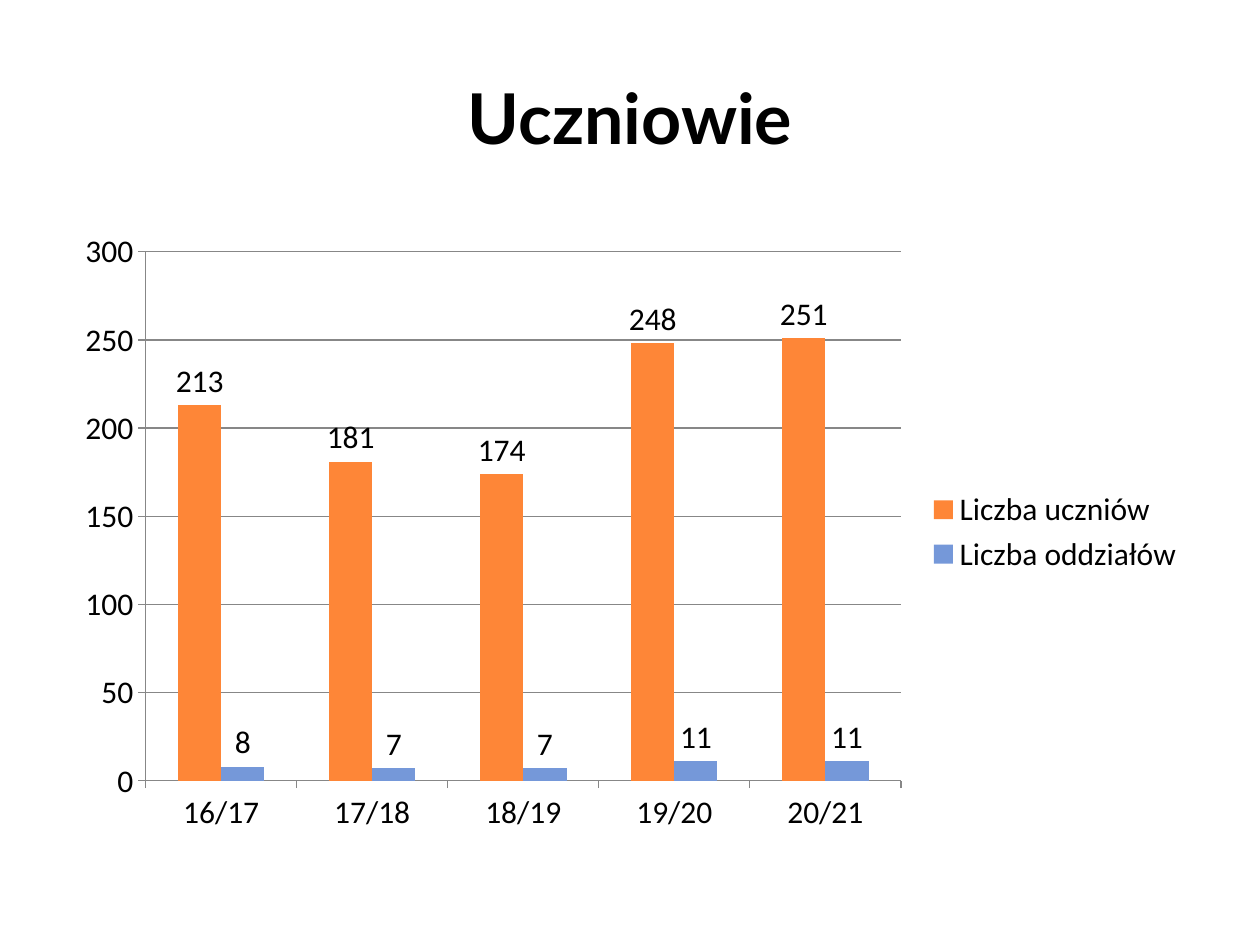
from lxml import etree
from pptx import Presentation
from pptx.chart.data import CategoryChartData
from pptx.dml.color import RGBColor
from pptx.enum.chart import XL_CHART_TYPE, XL_LABEL_POSITION, XL_LEGEND_POSITION, XL_TICK_MARK
from pptx.enum.text import MSO_ANCHOR, PP_ALIGN
from pptx.oxml.ns import qn
from pptx.util import Pt

COLUMNS = XL_CHART_TYPE.COLUMN_CLUSTERED
ABOVE = XL_LABEL_POSITION.OUTSIDE_END
RIGHT = XL_LEGEND_POSITION.RIGHT
OUTER = XL_TICK_MARK.OUTSIDE
NONE = XL_TICK_MARK.NONE
MIDDLE = MSO_ANCHOR.MIDDLE
CENTER = PP_ALIGN.CENTER

TITLE = "Uczniowie"
YEARS = ["16/17", "17/18", "18/19", "19/20", "20/21"]
SERIES = [
    ("Liczba uczniów", [213, 181, 174, 248, 251], "pupils"),
    ("Liczba oddziałów", [8, 7, 7, 11, 11], "classes"),
]
THEME = {
    "ink": RGBColor.from_string("000000"),
    "line": RGBColor.from_string("878787"),
    "pupils": RGBColor.from_string("FE8637"),
    "classes": RGBColor.from_string("7598D9"),
    "head": ("Lato", 40),
    "body": ("Calibri", 18),
}
PAGE = (1260, 945)
TITLE_BOX = (63, 38, 1134, 158)
CHART_BOX = (63, 220, 1134, 624)
PLOT_BOX = (146, 252, 755, 529)


def px(n):
    return round(n * 914400 / 126)


def style(font, kind, bold=False):
    font.name, size = THEME[kind]
    font.size = Pt(size)
    font.bold = bold
    font.color.rgb = THEME["ink"]


def rule(line):
    line.color.rgb = THEME["line"]
    line.width = Pt(0.75)


def add_title(slide):
    title = slide.shapes.title
    title.left, title.top, title.width, title.height = map(px, TITLE_BOX)
    frame = title.text_frame
    frame.text = TITLE
    frame.vertical_anchor = MIDDLE
    para = frame.paragraphs[0]
    para.alignment = CENTER
    style(para.font, "head", True)


def place_plot(chart):
    left, top, wide, high = CHART_BOX
    x, y, w, h = PLOT_BOX
    parts = [
        ("layoutTarget", "inner"), ("xMode", "edge"), ("yMode", "edge"),
        ("x", round((x - left) / wide, 3)), ("y", round((y - top) / high, 3)),
        ("w", round(w / wide, 3)), ("h", round(h / high, 3)),
    ]
    area = chart.element.find(".//" + qn("c:plotArea"))
    for old in area.findall(qn("c:layout")):
        area.remove(old)
    layout = etree.Element(qn("c:layout"))
    manual = etree.SubElement(layout, qn("c:manualLayout"))
    for tag, val in parts:
        etree.SubElement(manual, qn("c:" + tag)).set("val", str(val))
    area.insert(0, layout)


def add_chart(slide):
    data = CategoryChartData()
    data.categories = YEARS
    for name, vals, _ in SERIES:
        data.add_series(name, vals)
    chart = slide.shapes.add_chart(COLUMNS, *map(px, CHART_BOX), data).chart
    style(chart.font, "body")
    chart.has_title = False
    chart.has_legend = True
    chart.legend.position = RIGHT
    chart.legend.include_in_layout = False

    plot = chart.plots[0]
    plot.gap_width = 150
    plot.overlap = 0
    plot.vary_by_categories = False
    for series, (_, _, color) in zip(plot.series, SERIES):
        series.format.fill.solid()
        series.format.fill.fore_color.rgb = THEME[color]
        labels = series.data_labels
        labels.show_value = True
        labels.position = ABOVE

    for axis in (chart.category_axis, chart.value_axis):
        axis.major_tick_mark = OUTER
        axis.minor_tick_mark = NONE
        rule(axis.format.line)
    scale = chart.value_axis
    scale.minimum_scale, scale.maximum_scale, scale.major_unit = 0, 300, 50
    scale.has_major_gridlines = True
    rule(scale.major_gridlines.format.line)
    place_plot(chart)


def main():
    deck = Presentation()
    deck.slide_width, deck.slide_height = map(px, PAGE)
    slide = deck.slides.add_slide(deck.slide_layouts[5])
    add_title(slide)
    add_chart(slide)
    deck.save("out.pptx")


if __name__ == "__main__":
    main()
